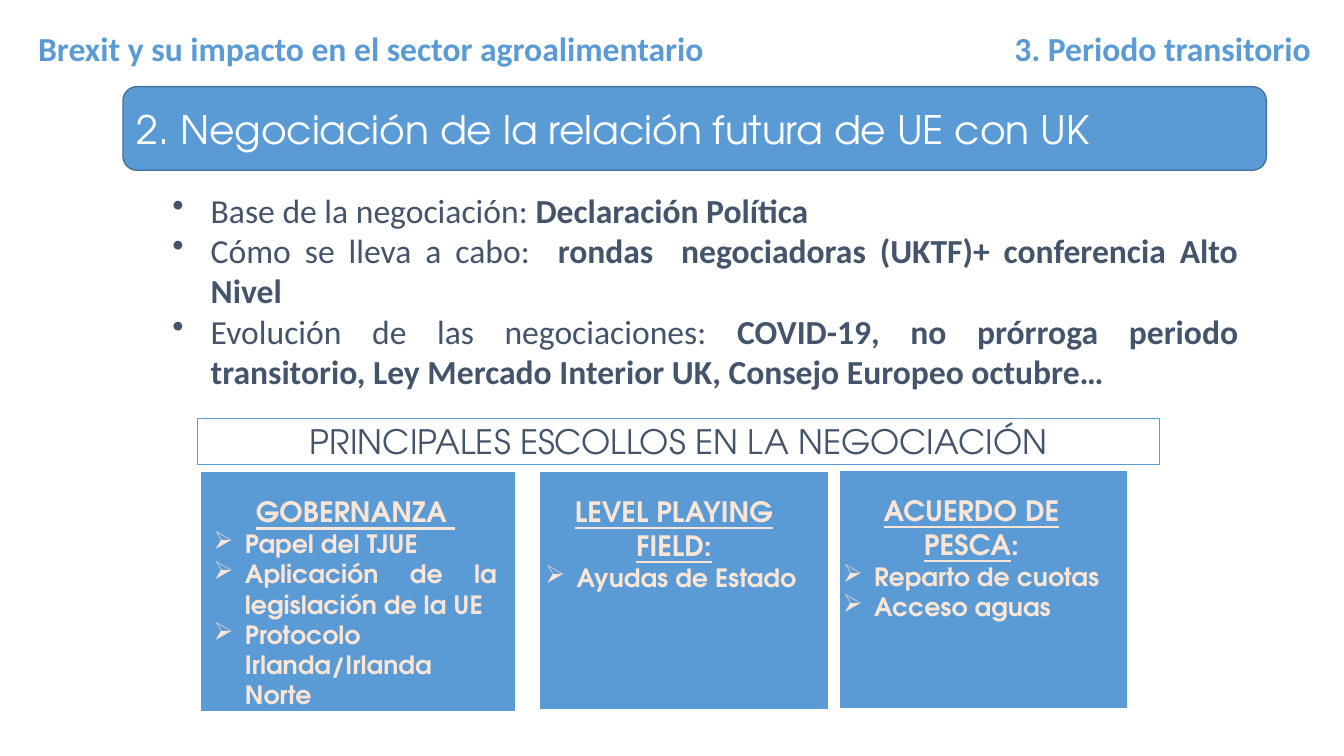
import pptx
import pptx.util
import pptx.dml.color
import pptx.enum.shapes
import pptx.enum.text
import pptx.oxml.ns
import lxml.etree

Inches = pptx.util.Inches
SHAPE = pptx.enum.shapes.MSO_SHAPE
ALIGN = pptx.enum.text.PP_ALIGN
ANCHOR = pptx.enum.text.MSO_ANCHOR

BLUE, EDGE, WHITE, SLATE, CREAM = "5B9BD5", "43739E", "FFFFFF", "44546A", "FBE5D6"
BODY, DISPLAY = "Calibri", "TeX Gyre Adventor"
DEEP_INSETS = (0.16, 0.48, 0.16, 0.16)
PLAIN_INSETS = (0.1, 0.05, 0.1, 0.05)


def color(hex_value):
    return pptx.dml.color.RGBColor.from_string(hex_value)


def add_panel(slide, box, fill, line=None, kind=SHAPE.RECTANGLE):
    panel = slide.shapes.add_shape(kind, *map(Inches, box))
    panel.shadow.inherit = False
    panel.fill.solid()
    panel.fill.fore_color.rgb = color(fill)
    if line:
        panel.line.color.rgb = color(line)
        panel.line.width = pptx.util.Pt(1)
    else:
        panel.line.fill.background()
    return panel


def set_frame(holder, insets=PLAIN_INSETS, anchor=ANCHOR.TOP):
    frame = holder.text_frame
    left, top, right, bottom = map(Inches, insets)
    settings = {"word_wrap": True, "vertical_anchor": anchor, "margin_left": left,
                "margin_top": top, "margin_right": right, "margin_bottom": bottom}
    for key, value in settings.items():
        setattr(frame, key, value)
    return frame


def write(paragraph, runs, align, size, font, ink):
    """Each run is a text with a dict of its own font values."""
    paragraph.alignment = align
    for text, extra in runs:
        run = paragraph.add_run()
        run.text = text
        run.font.color.rgb = color(ink)
        values = {"name": font, "size": pptx.util.Pt(size), **extra}
        for key, value in values.items():
            setattr(run.font, key, value)


def add_bullet(paragraph, symbol, indent):
    properties = paragraph._p.get_or_add_pPr()
    properties.set("marL", str(Inches(indent)))
    properties.set("indent", str(-Inches(indent)))
    bullet = lxml.etree.SubElement(properties, pptx.oxml.ns.qn("a:buChar"))
    bullet.set("char", symbol)


# Running heads and title bars: one line of text in a panel
def add_label(slide, box, text, align, size, font, ink, fill, line=None,
              kind=SHAPE.RECTANGLE, anchor=ANCHOR.MIDDLE, bold=False):
    frame = set_frame(add_panel(slide, box, fill, line, kind), anchor=anchor)
    write(frame.paragraphs[0], [(text, {"bold": bold})], align, size, font, ink)


# Main points: a plain lead followed by bold detail
def add_points(slide, box, points):
    frame = set_frame(slide.shapes.add_textbox(*map(Inches, box)), DEEP_INSETS)
    for index, (lead, detail) in enumerate(points):
        paragraph = frame.add_paragraph() if index else frame.paragraphs[0]
        add_bullet(paragraph, "•", 0.38)
        write(paragraph, [(lead, {"bold": False}), (detail, {"bold": True})],
              ALIGN.JUSTIFY if index else ALIGN.LEFT, 24, BODY, SLATE)


# Obstacle card: blue panel with an underlined heading and arrow bullets
def add_card(slide, box, text_shift, heading, tail, items):
    left, top, width, height = box
    add_panel(slide, box, BLUE, WHITE)
    text_box = (left + text_shift, top - 0.25, width, height)
    frame = set_frame(slide.shapes.add_textbox(*map(Inches, text_box)), DEEP_INSETS)
    runs = [(heading, {"bold": True, "underline": True})]
    if tail:
        runs.append((tail, {"bold": True}))
    write(frame.paragraphs[0], runs, ALIGN.CENTER, 20, DISPLAY, CREAM)
    for item in items:
        paragraph = frame.add_paragraph()
        add_bullet(paragraph, "➢", 0.31)
        write(paragraph, [(item, {"bold": True})], ALIGN.JUSTIFY, 18, DISPLAY, CREAM)


def main():
    deck = pptx.Presentation()
    deck.slide_width, deck.slide_height = Inches(13.33), Inches(7.5)
    slide = deck.slides.add_slide(deck.slide_layouts[6])

    # Running heads
    heads = [((0.28, 0.23, 7.12, 0.5), "Brexit y su impacto en el sector agroalimentario", ALIGN.LEFT),
             ((9.82, 0.23, 3.28, 0.5), "3. Periodo transitorio", ALIGN.RIGHT)]
    for box, text, align in heads:
        add_label(slide, box, text, align, 24, BODY, BLUE, WHITE,
                  anchor=ANCHOR.TOP, bold=True)

    # Title and main points
    add_label(slide, (1.22, 0.86, 11.34, 0.83),
              "2. Negociación de la relación futura de UE con UK",
              ALIGN.LEFT, 28, DISPLAY, WHITE, BLUE, EDGE, SHAPE.ROUNDED_RECTANGLE)
    add_points(slide, (1.55, 1.4, 10.89, 2.67), [
        ("Base de la negociación: ", "Declaración Política"),
        ("Cómo se lleva a cabo:  ", "rondas  negociadoras (UKTF)+ conferencia Alto Nivel"),
        ("Evolución de las negociaciones: ",
         "COVID-19, no prórroga periodo transitorio, Ley Mercado Interior UK, "
         "Consejo Europeo octubre…"),
    ])

    # Obstacles
    add_label(slide, (1.96, 4.15, 9.54, 0.46), "PRINCIPALES ESCOLLOS EN LA NEGOCIACIÓN",
              ALIGN.CENTER, 24, DISPLAY, SLATE, WHITE, BLUE)
    cards = [
        ((1.99, 4.68, 3.13, 2.38), -0.03, "GOBERNANZA ", "",
         ["Papel del TJUE ", "Aplicación de la legislación de la UE ",
          "Protocolo Irlanda/Irlanda Norte"]),
        ((5.35, 4.68, 2.87, 2.36), -0.1, "LEVEL PLAYING FIELD:", "", ["Ayudas de Estado"]),
        ((8.32, 4.67, 2.87, 2.36), -0.12, "ACUERDO DE PESCA", ":",
         ["Reparto de cuotas", "Acceso aguas"]),
    ]
    for card in cards:
        add_card(slide, *card)

    deck.save("out.pptx")


if __name__ == "__main__":
    main()
